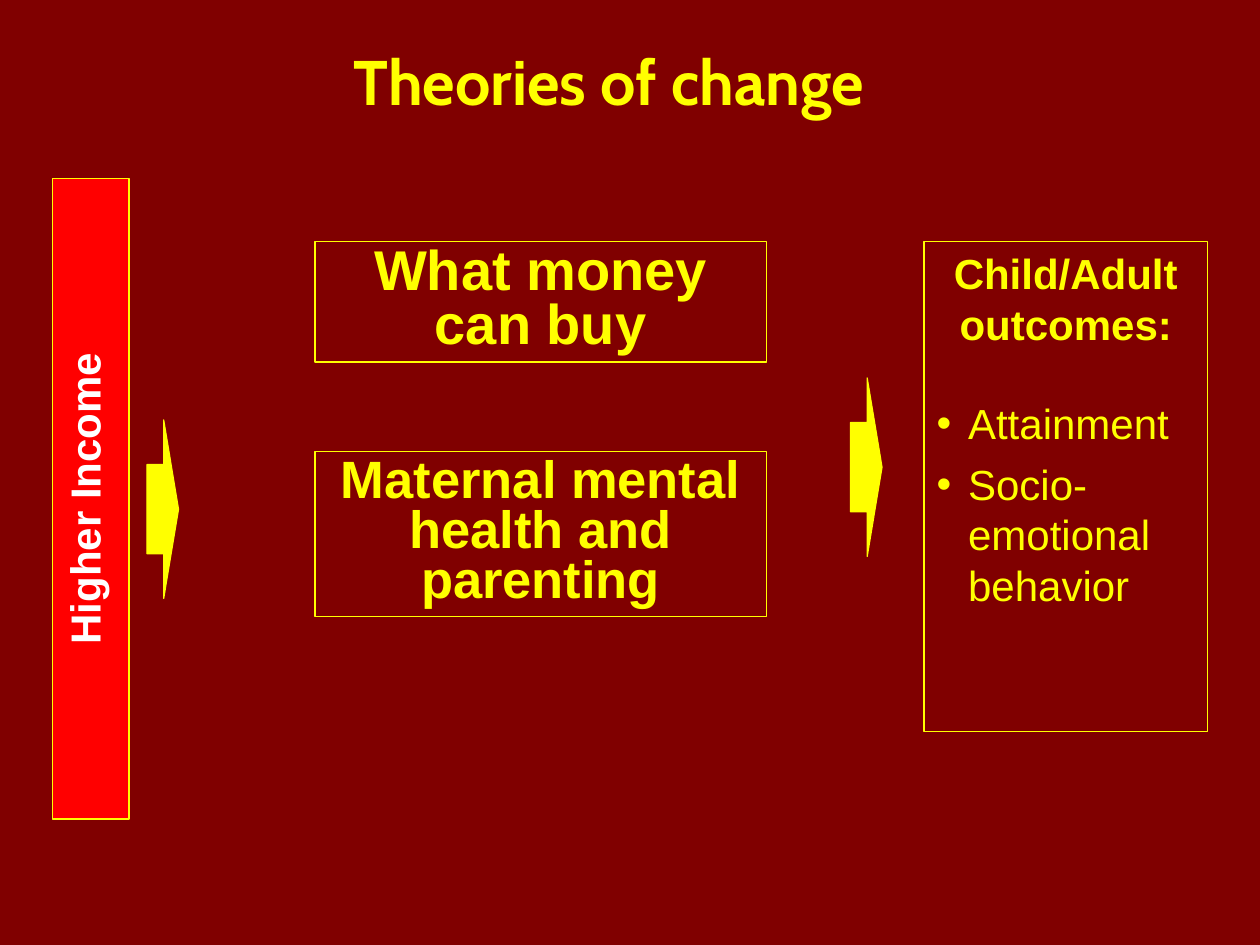
from dataclasses import dataclass
from typing import Optional

from lxml.etree import SubElement
from pptx import Presentation
from pptx.dml.color import RGBColor
from pptx.enum.shapes import MSO_SHAPE as Preset
from pptx.enum.text import MSO_ANCHOR as Anchor, MSO_AUTO_SIZE as AutoSize, PP_ALIGN as Align
from pptx.oxml.ns import qn
from pptx.util import Inches, Pt

COLORS = {"background": "800000", "accent": "FFFF00", "income": "FF0000", "white": "FFFFFF"}
CELL = Inches(1 / 12)
COLUMNS, ROWS = 120, 90


@dataclass(frozen=True)
class Area:
    column: float
    row: float
    columns: float
    rows: float


@dataclass(frozen=True)
class Box:
    area: Area
    text: str
    size: int
    spacing: float = 1.0
    fill: Optional[str] = None
    color: str = "accent"
    line_width: float = 0.75
    vertical: bool = False


TITLE_AREA = Area(2, 3.6, 112, 9.4)
OUTCOMES_AREA = Area(88, 23, 27, 46.7)
BOXES = [
    Box(Area(30, 23, 43, 11.5), "What money can buy", 32, 0.8),
    Box(Area(30, 43, 43, 15.7), "Maternal mental health and parenting", 30, 0.8),
    Box(Area(5, 17, 7.3, 61), "Higher Income", 24, fill="income", color="white",
        line_width=1, vertical=True),
]
ARROWS = [Area(14, 40, 3, 17), Area(81, 36, 3, 17)]
OUTCOMES = ["Attainment", "Socio-emotional behavior"]


def rgb(name: str) -> RGBColor:
    return RGBColor.from_string(COLORS[name])


def bounds(area: Area) -> list[int]:
    return [round(cells * CELL) for cells in (area.column, area.row, area.columns, area.rows)]


def place(shape, area: Area) -> None:
    shape.left, shape.top, shape.width, shape.height = bounds(area)


def outline(shape, width: float = 0.75) -> None:
    shape.line.color.rgb = rgb("accent")
    shape.line.width = Pt(width)


def format_paragraph(paragraph, size: int, font: str = "Arial", color: str = "accent",
                     bold: bool = True, align=Align.CENTER, spacing: float = 1.0) -> None:
    paragraph.alignment = align
    paragraph.line_spacing = spacing
    paragraph.space_before = Pt(0)
    paragraph.font.size = Pt(size)
    paragraph.font.name = font
    paragraph.font.bold = bold
    paragraph.font.color.rgb = rgb(color)


def set_bullet(paragraph, character: Optional[str] = None) -> None:
    properties = paragraph._p.get_or_add_pPr()
    indent = Inches(0.25) if character else 0
    properties.set("marL", str(indent))
    properties.set("indent", str(-indent))
    if character:
        SubElement(properties, qn("a:buFont")).set("typeface", "Arial")
        SubElement(properties, qn("a:buChar")).set("char", character)
    else:
        SubElement(properties, qn("a:buNone"))


def add_preset(slide, preset, area: Area, fill: Optional[str], line_width: float = 0.75):
    shape = slide.shapes.add_shape(preset, *bounds(area))
    shape.shadow.inherit = False
    if fill:
        shape.fill.solid()
        shape.fill.fore_color.rgb = rgb(fill)
    else:
        shape.fill.background()
    outline(shape, line_width)
    return shape


def add_box(slide, box: Box) -> None:
    shape = add_preset(slide, Preset.RECTANGLE, box.area, box.fill, box.line_width)
    frame = shape.text_frame
    frame.word_wrap = True
    frame.vertical_anchor = Anchor.TOP
    if box.vertical:
        frame._txBody.bodyPr.set("vert", "vert270")
    frame.text = box.text
    format_paragraph(frame.paragraphs[0], box.size, color=box.color, spacing=box.spacing)


def add_arrow(slide, area: Area) -> None:
    arrow = add_preset(slide, Preset.RIGHT_ARROW, area, "accent")
    arrow.adjustments[0] = 0.5
    arrow.adjustments[1] = 0.47


def fill_title(title) -> None:
    place(title, TITLE_AREA)
    title.text_frame.text = "Theories of change"
    title.text_frame.vertical_anchor = Anchor.MIDDLE
    format_paragraph(title.text_frame.paragraphs[0], 36, font="Cabin", spacing=0.8)


def fill_outcomes(body) -> None:
    place(body, OUTCOMES_AREA)
    outline(body)
    frame = body.text_frame
    frame.auto_size = AutoSize.NONE
    frame.vertical_anchor = Anchor.TOP
    frame.text = "Child/Adult outcomes:"
    heading = frame.paragraphs[0]
    format_paragraph(heading, 24)
    heading.space_after = Pt(28)
    set_bullet(heading)
    for outcome in OUTCOMES:
        paragraph = frame.add_paragraph()
        paragraph.text = outcome
        format_paragraph(paragraph, 24, bold=False, align=Align.LEFT)
        paragraph.space_after = Pt(6)
        set_bullet(paragraph, "•")


def main() -> None:
    presentation = Presentation()
    presentation.slide_width = COLUMNS * CELL
    presentation.slide_height = ROWS * CELL
    slide = presentation.slides.add_slide(presentation.slide_layouts[1])
    slide.background.fill.solid()
    slide.background.fill.fore_color.rgb = rgb("background")
    fill_title(slide.shapes.title)
    fill_outcomes(slide.placeholders[1])
    for box in BOXES:
        add_box(slide, box)
    for arrow in ARROWS:
        add_arrow(slide, arrow)
    presentation.save("out.pptx")


if __name__ == "__main__":
    main()
